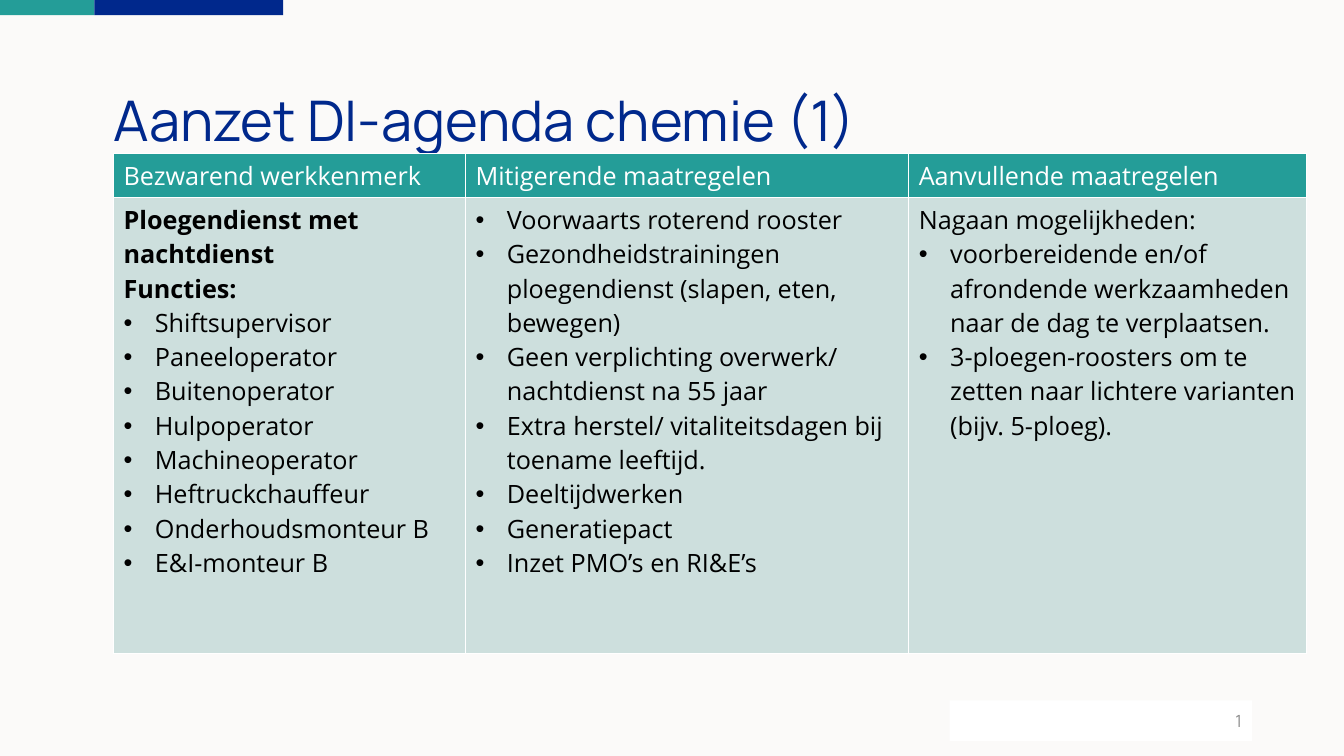
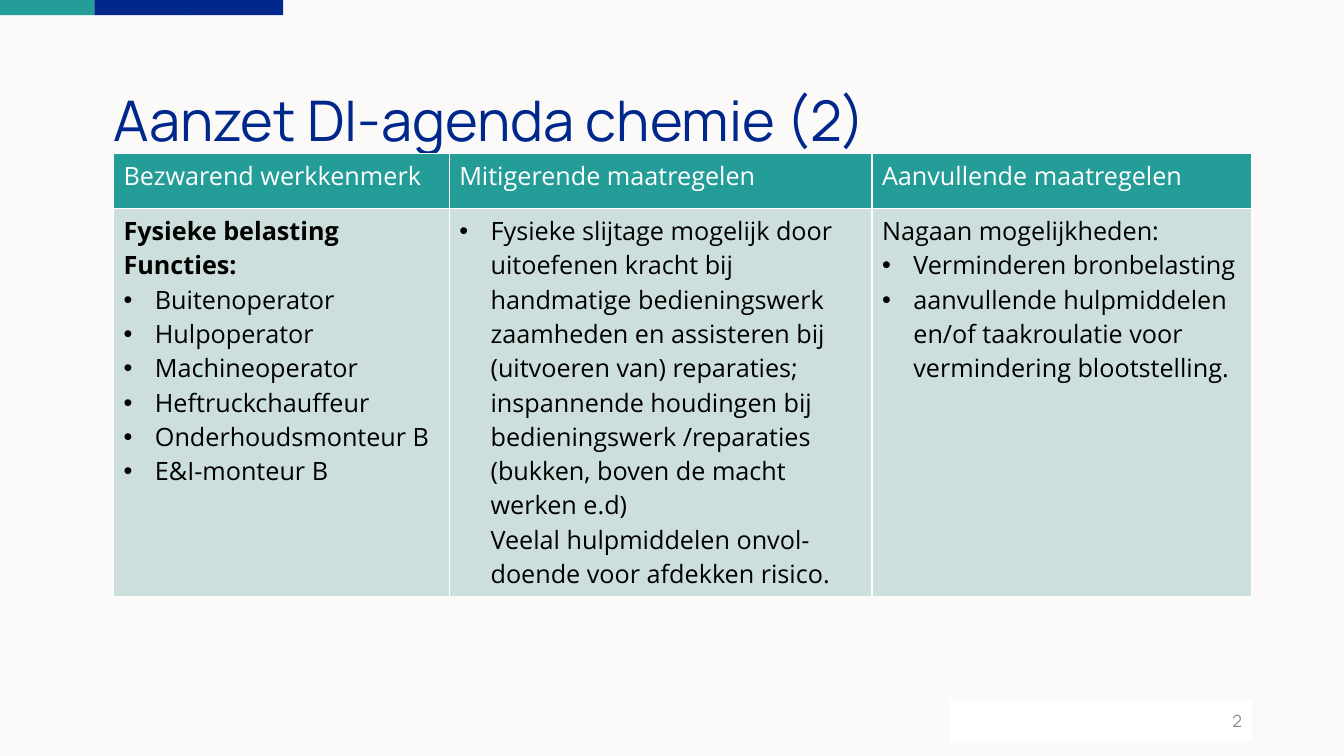
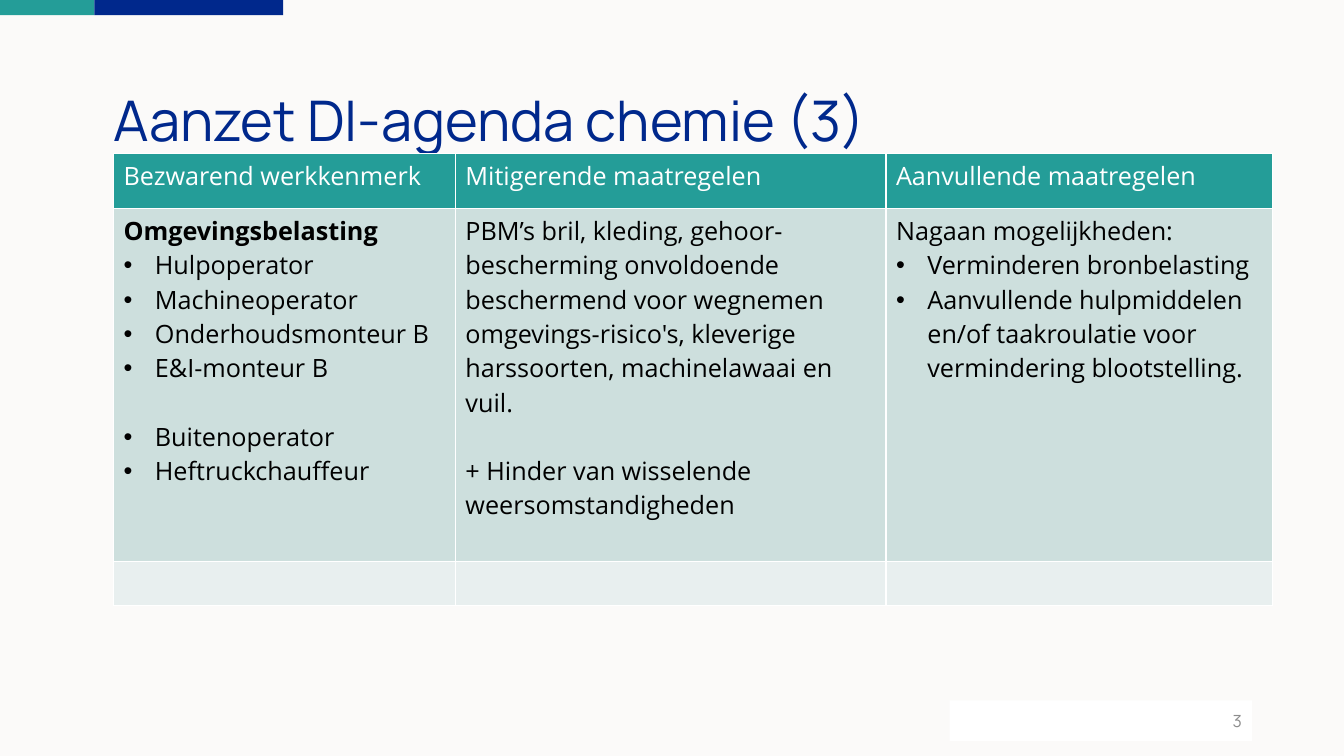
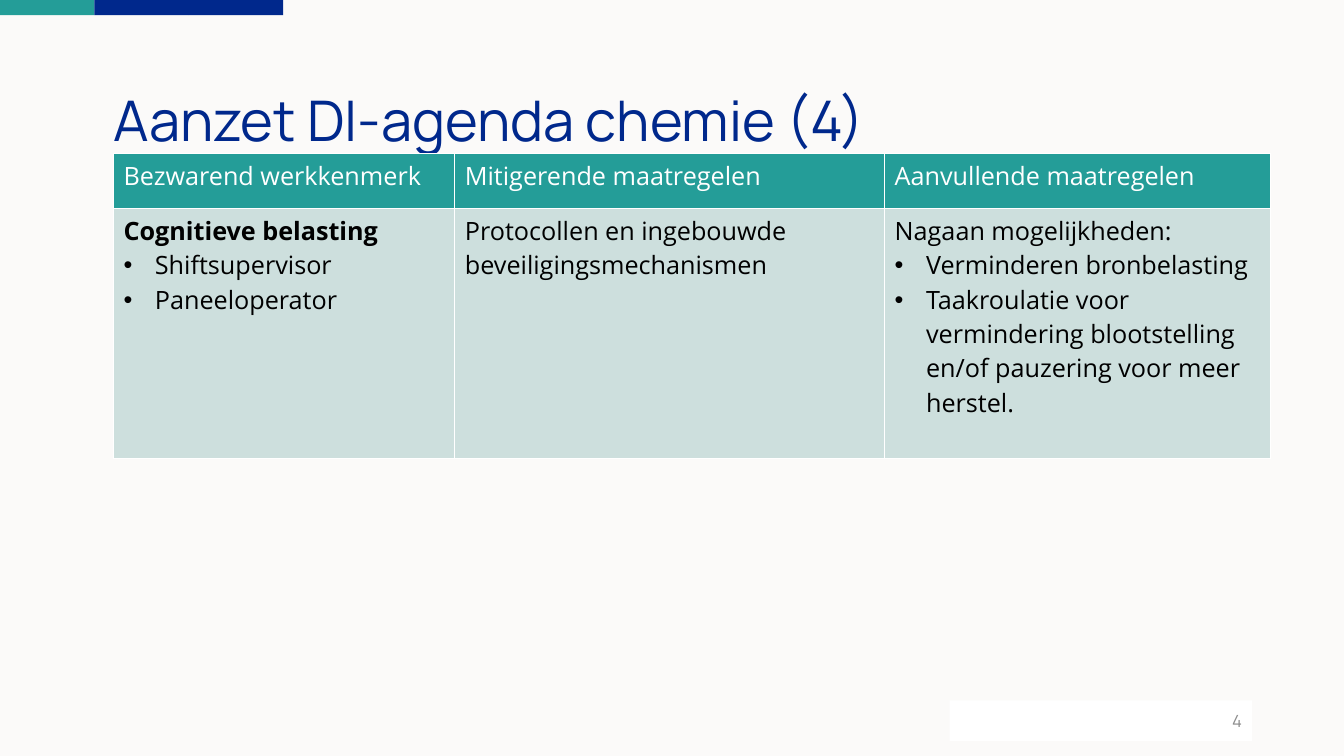
from typing import NamedTuple

from lxml.etree import SubElement
from pptx import Presentation
from pptx.dml.color import RGBColor
from pptx.enum.shapes import MSO_SHAPE as Shape
from pptx.enum.text import MSO_ANCHOR as Anchor, PP_ALIGN as Align
from pptx.oxml.ns import qn
from pptx.util import Cm, Pt

COLORS = {
    "background": "FBFAF9",
    "teal": "249D98",
    "navy": "00288C",
    "white": "FFFFFF",
    "black": "000000",
    "gray": "8C8C8C",
    "body row": "CDDFDD",
    "spare row": "E8EFEF",
}
TITLE_FONT, TABLE_FONT = "Manrope", "Open Sans"
BAND_WIDTH, BAND_HEIGHT = 2.38, 0.38
TABLE_LEFT, TABLE_TOP = 2.86, 3.86
COLUMN_SHARES = (0.295, 0.3715, 0.3335)
LINE_HEIGHT = 24.5
INDENT = Cm(0.79)
HEADINGS = ("Bezwarend werkkenmerk", "Mitigerende maatregelen", "Aanvullende maatregelen")


class Line(NamedTuple):
    text: str
    bullet: bool = False
    bold: bool = False
    gap: float = 0


def bullets(*texts, gap=0):
    """Bulleted lines; gap is the space above the first, in points."""
    return [Line(text, bullet=True, gap=0 if i else gap) for i, text in enumerate(texts)]


def bold(*texts):
    return [Line(text, bold=True) for text in texts]


def options(*texts):
    return [Line("Nagaan mogelijkheden:"), *bullets(*texts)]


class Deck:
    def __init__(self):
        self.file = Presentation()
        self.file.slide_width, self.file.slide_height = Cm(33.87), Cm(19.05)
        self.paint(self.file.slide_master.background, "background")
        self.page = None

    def paint(self, target, color):
        target.fill.solid()
        target.fill.fore_color.rgb = RGBColor.from_string(COLORS[color])

    def style(self, paragraph, font, size, color, is_bold=False):
        paragraph.font.name = font
        paragraph.font.size = Pt(size)
        paragraph.font.bold = is_bold
        paragraph.font.color.rgb = RGBColor.from_string(COLORS[color])

    def add_page(self, title):
        self.page = self.file.slides.add_slide(self.file.slide_layouts[5])
        for i, color in enumerate(("teal", "navy", "navy")):
            self.rectangle(i * BAND_WIDTH, 0, BAND_WIDTH, BAND_HEIGHT, color)
        self.title(title)
        self.page_number()

    def rectangle(self, left, top, width, height, color):
        box = self.page.shapes.add_shape(
            Shape.RECTANGLE, Cm(left), Cm(top), Cm(width), Cm(height))
        box.shadow.inherit = False
        self.paint(box, color)
        box.line.fill.background()
        return box

    def title(self, text):
        box = self.page.shapes.title
        box.left, box.top, box.width, box.height = Cm(2.87), Cm(2.08), Cm(28.2), Cm(1.78)
        frame = box.text_frame
        frame.margin_left = frame.margin_top = frame.margin_right = frame.margin_bottom = 0
        frame.vertical_anchor = Anchor.BOTTOM
        frame.word_wrap = True
        paragraph = frame.paragraphs[0]
        paragraph.text = text
        paragraph.alignment = Align.LEFT
        paragraph.line_spacing = 0.9
        self.style(paragraph, TITLE_FONT, 40, "navy")

    def page_number(self):
        frame = self.rectangle(23.93, 17.65, 7.62, 1.02, "white").text_frame
        frame.vertical_anchor = Anchor.MIDDLE
        frame.word_wrap = False
        paragraph = frame.paragraphs[0]
        paragraph.alignment = Align.RIGHT
        self.style(paragraph, TITLE_FONT, 12, "gray")
        field = SubElement(paragraph._p, qn("a:fld"), type="slidenum",
                           id="{B6F15528-21DE-4FAA-801E-634DDDAF4B2B}")
        SubElement(field, qn("a:rPr"), lang="nl-NL")
        SubElement(field, qn("a:t")).text = str(len(self.file.slides))

    def table(self, width, heights, cells):
        """Draw the heading row, the row of cells, and an empty row for each height left."""
        table = self.page.shapes.add_table(
            len(heights), len(HEADINGS), Cm(TABLE_LEFT), Cm(TABLE_TOP),
            Cm(width), Cm(sum(heights))).table
        table.first_row = table.horz_banding = False
        for column, share in zip(table.columns, COLUMN_SHARES):
            column.width = Cm(width * share)
        for row, height in zip(table.rows, heights):
            row.height = Cm(height)
        contents = [[[Line(text)] for text in HEADINGS], cells, [[]] * len(HEADINGS)]
        looks = (("teal", "white"), ("body row", "black"), ("spare row", "black"))
        for row, lines_by_cell, (fill, color) in zip(table.rows, contents, looks):
            for cell, lines in zip(row.cells, lines_by_cell):
                self.borders(cell)
                self.paint(cell, fill)
                self.lines(cell.text_frame, lines, color)

    def borders(self, cell):
        properties = cell._tc.get_or_add_tcPr()
        for side in ("lnL", "lnR", "lnT", "lnB"):
            line = SubElement(properties, qn(f"a:{side}"), w=str(Pt(1)))
            fill = SubElement(line, qn("a:solidFill"))
            SubElement(fill, qn("a:srgbClr"), val=COLORS["white"])

    def lines(self, frame, lines, color):
        for i, line in enumerate(lines):
            paragraph = frame.add_paragraph() if i else frame.paragraphs[0]
            paragraph.text = line.text
            if line.gap:
                paragraph.space_before = Pt(line.gap)
            if line.bullet:
                properties = paragraph._p.get_or_add_pPr()
                properties.set("marL", str(INDENT))
                properties.set("indent", str(-INDENT))
                SubElement(properties, qn("a:buFont"), typeface="Arial")
                SubElement(properties, qn("a:buChar"), char="•")
            self.style(paragraph, TABLE_FONT, 18, color, line.bold)


AGENDA = [
    (30.07, (1.12, 11.48), [
        bold("Ploegendienst met nachtdienst", "Functies:")
        + bullets("Shiftsupervisor", "Paneeloperator", "Buitenoperator", "Hulpoperator",
                  "Machineoperator", "Heftruckchauffeur", "Onderhoudsmonteur B",
                  "E&I-monteur B"),
        bullets("Voorwaarts roterend rooster",
                "Gezondheidstrainingen ploegendienst (slapen, eten, bewegen)",
                "Geen verplichting overwerk/ nachtdienst na 55 jaar",
                "Extra herstel/ vitaliteitsdagen bij toename leeftijd.",
                "Deeltijdwerken", "Generatiepact", "Inzet PMO’s en RI&E’s"),
        options("voorbereidende en/of afrondende werkzaamheden naar de dag te verplaatsen.",
                "3-ploegen-roosters om te zetten naar lichtere varianten (bijv. 5-ploeg)."),
    ]),
    (28.68, (1.4, 9.78), [
        bold("Fysieke belasting Functies:")
        + bullets("Buitenoperator", "Hulpoperator", "Machineoperator", "Heftruckchauffeur",
                  "Onderhoudsmonteur B", "E&I-monteur B"),
        bullets("Fysieke slijtage mogelijk door uitoefenen kracht bij handmatige "
                "bedieningswerk zaamheden en assisteren bij (uitvoeren van) reparaties; "
                "inspannende houdingen bij bedieningswerk /reparaties (bukken, boven de "
                "macht werken e.d)\vVeelal hulpmiddelen onvol-doende voor afdekken risico."),
        options("Verminderen bronbelasting",
                "aanvullende hulpmiddelen en/of taakroulatie voor vermindering "
                "blootstelling."),
    ]),
    (29.21, (1.4, 8.88, 1.12), [
        bold("Omgevingsbelasting")
        + bullets("Hulpoperator", "Machineoperator", "Onderhoudsmonteur B", "E&I-monteur B")
        + bullets("Buitenoperator", "Heftruckchauffeur", gap=LINE_HEIGHT),
        [Line("PBM’s bril, kleding, gehoor-bescherming onvoldoende beschermend voor "
              "wegnemen omgevings-risico's, kleverige harssoorten, machinelawaai en vuil."),
         Line("+ Hinder van wisselende weersomstandigheden", gap=LINE_HEIGHT)],
        options("Verminderen bronbelasting",
                "Aanvullende hulpmiddelen en/of taakroulatie voor vermindering "
                "blootstelling."),
    ]),
    (29.16, (1.4, 6.3), [
        bold("Cognitieve belasting") + bullets("Shiftsupervisor", "Paneeloperator"),
        [Line("Protocollen en ingebouwde beveiligingsmechanismen")],
        options("Verminderen bronbelasting",
                "Taakroulatie voor vermindering blootstelling en/of pauzering voor meer "
                "herstel."),
    ]),
]


def main():
    deck = Deck()
    for number, (width, heights, cells) in enumerate(AGENDA, start=1):
        deck.add_page(f"Aanzet DI-agenda chemie ({number})")
        deck.table(width, heights, cells)
    deck.file.save("out.pptx")


if __name__ == "__main__":
    main()
